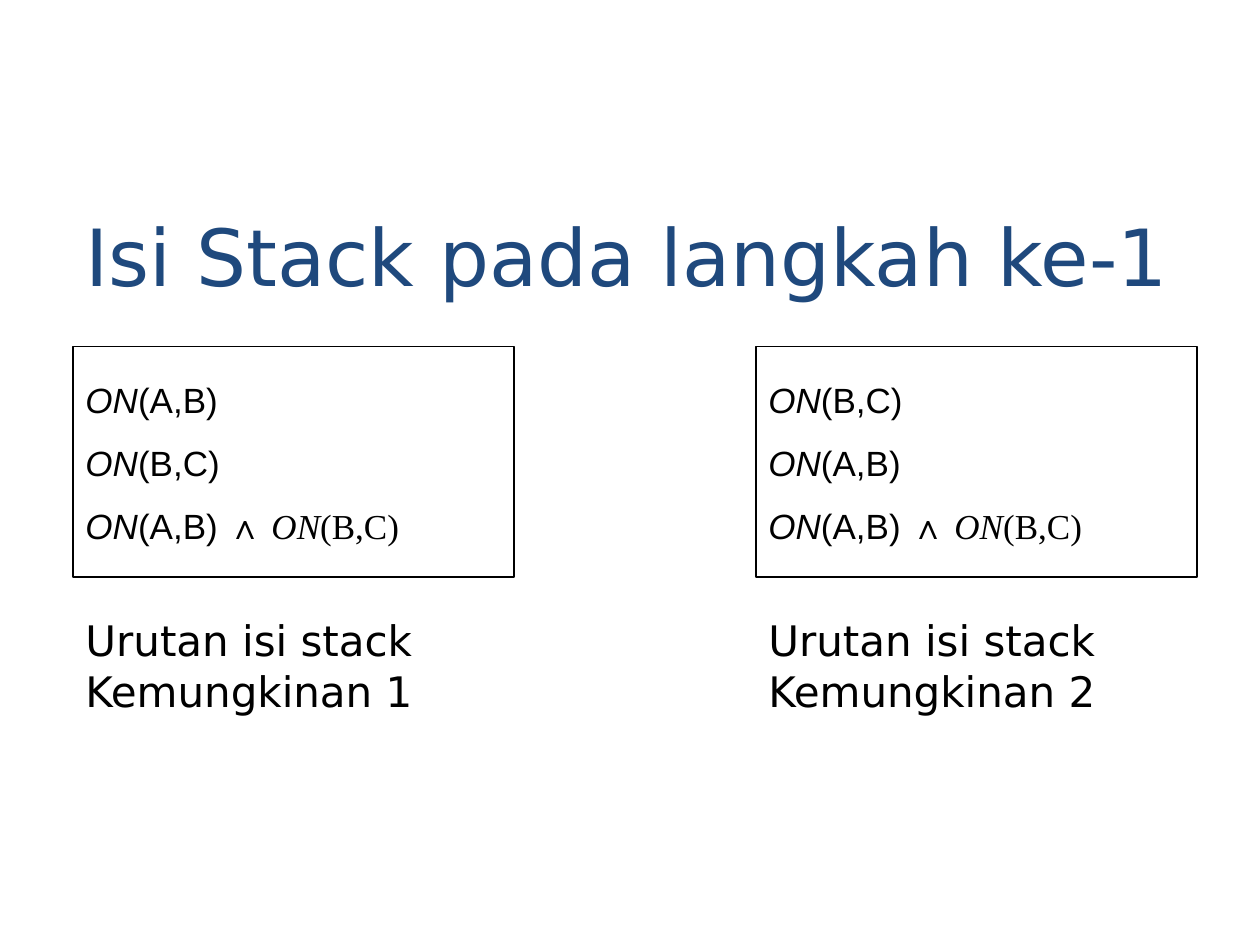
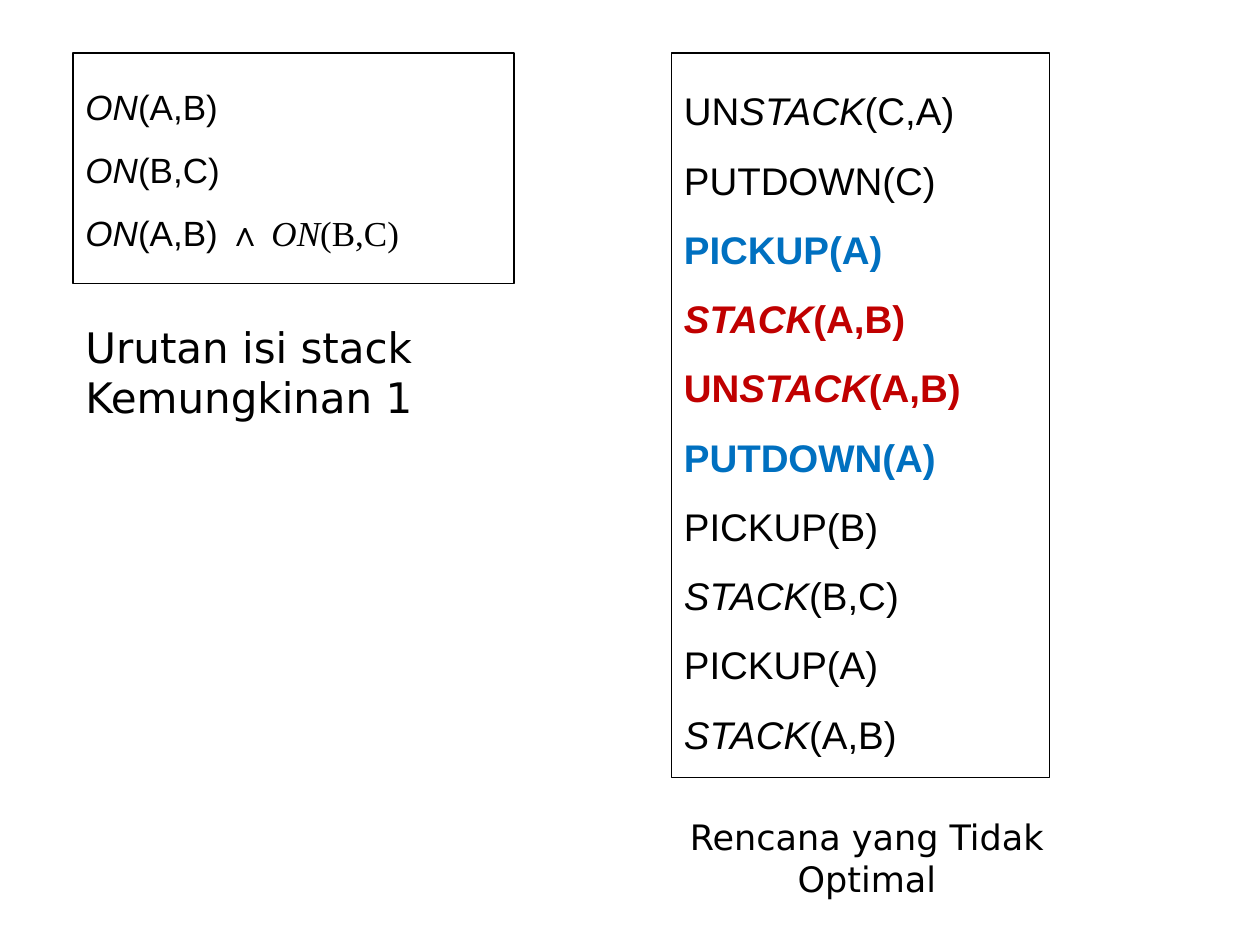
from dataclasses import dataclass

from pptx import Presentation
from pptx.dml.color import RGBColor
from pptx.enum import shapes, text
from pptx.util import Inches, Pt


@dataclass(frozen=True)
class Theme:
    black: RGBColor = RGBColor.from_string("000000")
    white: RGBColor = RGBColor.from_string("FFFFFF")
    navy: RGBColor = RGBColor.from_string("1F497D")
    blue: RGBColor = RGBColor.from_string("0070C0")
    red: RGBColor = RGBColor.from_string("C00000")
    heading_font: str = "DejaVu Sans"
    code_font: str = "Arial"
    logic_font: str = "Times New Roman"
    title_size: int = 45
    caption_size: int = 24
    plan_size: int = 22
    goal_size: int = 20
    verdict_size: int = 20


theme = Theme()


def add_code_box(parent, left, top, width, height, colored_lines, size):
    box = parent.add_shape(shapes.MSO_SHAPE.RECTANGLE, Inches(left), Inches(top), Inches(width), Inches(height))
    box.shadow.inherit = False
    box.fill.solid()
    box.fill.fore_color.rgb = theme.white
    box.line.color.rgb = theme.black
    box.line.width = Pt(0.75)
    frame = box.text_frame
    frame.word_wrap = True
    frame.vertical_anchor = text.MSO_ANCHOR.TOP
    frame.margin_left = frame.margin_right = Inches(0.1)
    frame.margin_top, frame.margin_bottom = Inches(0.09), Inches(0.05)
    for row, (line, color) in enumerate(colored_lines):
        para = frame.paragraphs[0] if row == 0 else frame.add_paragraph()
        before, wedge, after = line.partition("∧")
        para.alignment = text.PP_ALIGN.LEFT if wedge else text.PP_ALIGN.JUSTIFY
        para.line_spacing = 1.5
        for words, family in ((before, theme.code_font), (wedge + after, theme.logic_font)):
            for position, piece in enumerate(words.split("*")):
                if piece:
                    span = para.add_run()
                    span.text = piece
                    span.font.name, span.font.size = family, Pt(size)
                    span.font.italic = position % 2 == 1
                    span.font.bold = color != theme.black
                    span.font.color.rgb = color


def add_caption(parent, left, top, width, height, words, size, alignment):
    box = parent.add_textbox(Inches(left), Inches(top), Inches(width), Inches(height))
    frame = box.text_frame
    frame.word_wrap = True
    frame.auto_size = text.MSO_AUTO_SIZE.SHAPE_TO_FIT_TEXT
    frame.text = words
    para = frame.paragraphs[0]
    para.alignment = alignment
    font = para.runs[0].font
    font.name, font.size = theme.heading_font, Pt(size)
    font.color.rgb = theme.black


deck = Presentation()
deck.slide_width, deck.slide_height = Inches(10), Inches(7.5)
title_only, blank = deck.slide_layouts[5], deck.slide_layouts[6]
stack_page = deck.slides.add_slide(title_only)
plan_page = deck.slides.add_slide(blank)

left_edge = 0.58
plan_page_top = 0.42

title = stack_page.shapes.title
title.left, title.top, title.width, title.height = Inches(left_edge), Inches(1.4), Inches(9.08), Inches(1.25)
title.text_frame.text = "Isi Stack pada langkah ke-1"
title.text_frame.vertical_anchor = text.MSO_ANCHOR.MIDDLE
heading = title.text_frame.paragraphs[0]
heading.alignment = text.PP_ALIGN.LEFT
heading_font = heading.runs[0].font
heading_font.name, heading_font.size = theme.heading_font, Pt(theme.title_size)
heading_font.color.rgb = theme.navy

stack_width, stack_height, caption_gap = 3.5, 1.83, 0.25
goal_ab, goal_bc = "*ON*(A,B)", "*ON*(B,C)"
both_goals = f"{goal_ab} ∧ {goal_bc}"
goal_orders = {1: [goal_ab, goal_bc], 2: [goal_bc, goal_ab]}
stack_places = [
    (stack_page, left_edge, 2.75, 1),
    (stack_page, 6, 2.75, 2),
    (plan_page, left_edge, plan_page_top, 1),
]
for page, left, top, number in stack_places:
    group = page.shapes.add_group_shape()
    goals = [(goal, theme.black) for goal in [*goal_orders[number], both_goals]]
    add_code_box(group.shapes, left, top, stack_width, stack_height, goals, theme.goal_size)
    add_caption(group.shapes, left, top + stack_height + caption_gap, stack_width, 0.91,
                f"Urutan isi stack Kemungkinan {number}", theme.caption_size, text.PP_ALIGN.LEFT)

plan_left, plan_width, plan_height = 5.33, 3, 5.75
plan_steps = [
    ("UN*STACK*(C,A)", theme.black),
    ("PUTDOWN(C)", theme.black),
    ("PICKUP(A)", theme.blue),
    ("*STACK*(A,B)", theme.red),
    ("UN*STACK*(A,B)", theme.red),
    ("PUTDOWN(A)", theme.blue),
    ("PICKUP(B)", theme.black),
    ("*STACK*(B,C)", theme.black),
    ("PICKUP(A)", theme.black),
    ("*STACK*(A,B)", theme.black),
]
add_code_box(plan_page.shapes, plan_left, plan_page_top, plan_width, plan_height, plan_steps, theme.plan_size)
add_caption(plan_page.shapes, 4.92, plan_page_top + plan_height + caption_gap, 3.92, 0.44,
            "Rencana yang Tidak Optimal", theme.verdict_size, text.PP_ALIGN.CENTER)

deck.save("out.pptx")
